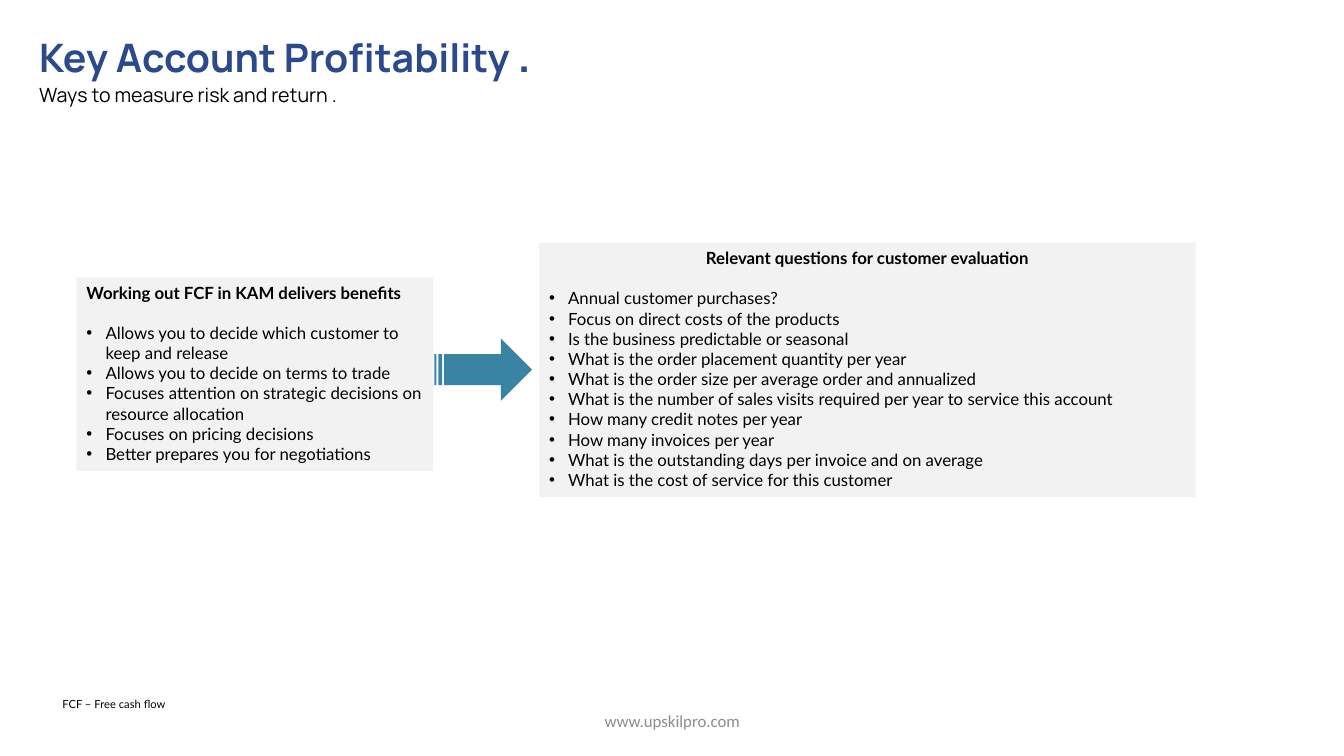
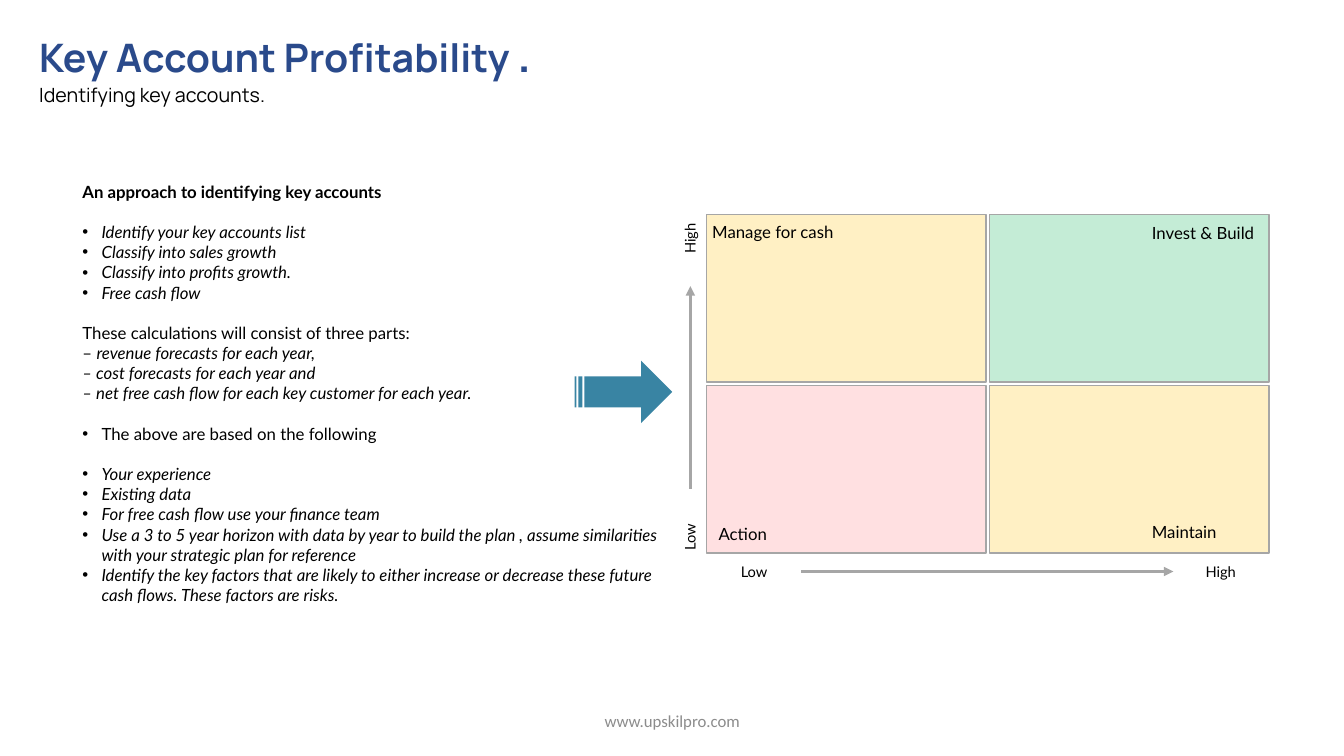
from dataclasses import dataclass

from lxml.etree import SubElement
from pptx import Presentation
from pptx.dml.color import RGBColor
from pptx.enum.shapes import MSO_CONNECTOR as Link, MSO_SHAPE as Preset
from pptx.enum.text import MSO_ANCHOR as Anchor, PP_ALIGN as Align
from pptx.oxml.ns import qn
from pptx.util import Cm, Pt


@dataclass(frozen=True)
class Theme:
    # Colours
    title: str = "2A4A8B"
    text: str = "000000"
    footer: str = "8C8C8C"
    panel: str = "F2F2F2"
    white: str = "FFFFFF"
    arrow: str = "3984A3"
    axis: str = "A6A6A6"
    amber: str = "FFC000"
    green: str = "00B050"
    red: str = "FF7C80"
    # Fonts
    title_font: str = "Manrope"
    body_font: str = "Lato"
    footer_font: str = "Calibri"
    # Type sizes and spacing in points
    title_size: float = 28
    title_dot_size: float = 32
    subtitle_size: float = 14
    body_size: float = 12
    axis_size: float = 10.5
    note_size: float = 8
    line_gap: float = 14.4


THEME = Theme()


def write(frame, text, size=THEME.body_size, font=THEME.body_font,
          color=THEME.text, bold=False, italic=False, align=Align.LEFT,
          before=0, after=0, spacing=None, bullet=False, tail=None):
    """Add a paragraph; tail is an optional (text, changed format) second run."""
    first = frame.paragraphs[0]
    paragraph = frame.add_paragraph() if first.runs else first
    paragraph.alignment = align
    paragraph.space_before, paragraph.space_after = Pt(before), Pt(after)
    if spacing:
        paragraph.line_spacing = spacing
    if bullet:
        properties = paragraph._p.get_or_add_pPr()
        properties.set("marL", str(Cm(0.48)))
        properties.set("indent", str(-Cm(0.48)))
        SubElement(properties, qn("a:buFont")).set("typeface", "Arial")
        SubElement(properties, qn("a:buChar")).set("char", "•")

    base = dict(size=size, italic=italic)
    tail_text, changes = tail or ("", {})
    for words, style in ((text, base), (tail_text, {**base, **changes})):
        if words:
            run = paragraph.add_run()
            run.text = words
            run.font.name, run.font.bold = font, bold
            run.font.size, run.font.italic = Pt(style["size"]), style["italic"]
            run.font.color.rgb = RGBColor.from_string(color)


class Deck:
    """Holds the style and the current slide; lengths are centimetres."""

    def __init__(self, theme):
        self.theme = theme
        self.file = Presentation()
        self.file.slide_width, self.file.slide_height = Cm(33.87), Cm(19.05)
        self.slide = None

    def start_slide(self, subtitle):
        theme = self.theme
        self.slide = self.file.slides.add_slide(self.file.slide_layouts[6])
        self.label(11.23, 17.65, 11.43, 1.02, "www.upskilpro.com",
                   anchor=Anchor.MIDDLE, font=theme.footer_font,
                   color=theme.footer, align=Align.CENTER)
        heading = self.label(0.74, 0.58, 17.81, 2.24, "Key Account Profitability ",
                             size=theme.title_size, font=theme.title_font,
                             color=theme.title, bold=True,
                             tail=(".", {"size": theme.title_dot_size}))
        write(heading, subtitle, size=theme.subtitle_size,
              font=theme.title_font, spacing=1.07, after=8)

    def label(self, left, top, width, height, text, rotation=0,
              anchor=Anchor.TOP, **style):
        box = self.slide.shapes.add_textbox(Cm(left), Cm(top), Cm(width), Cm(height))
        box.rotation = rotation
        frame = box.text_frame
        frame.word_wrap, frame.vertical_anchor = True, anchor
        write(frame, text, **style)
        return frame

    def block(self, preset, left, top, width, height, fill, alpha=None, line=None):
        block = self.slide.shapes.add_shape(
            preset, Cm(left), Cm(top), Cm(width), Cm(height))
        block.shadow.inherit = False
        block.fill.solid()
        block.fill.fore_color.rgb = RGBColor.from_string(fill)
        if alpha is not None:
            color = next(block.fill._xPr.iter(qn("a:srgbClr")))
            SubElement(color, qn("a:alpha")).set("val", str(alpha * 1000))
        if line:
            block.line.color.rgb = RGBColor.from_string(line)
            block.line.width = Pt(1)
        else:
            block.line.fill.background()
        return block

    def panel(self, left, top, width, height, fill, heading, lines, align=Align.LEFT):
        """Draw a heading and lines given as (text, format) pairs."""
        panel = self.block(Preset.RECTANGLE, left, top, width, height, fill)
        frame = panel.text_frame
        frame.word_wrap, frame.vertical_anchor = True, Anchor.TOP
        write(frame, heading, bold=True, align=align)
        for text, style in lines:
            write(frame, text, **style)

    def striped_arrow(self, left, top):
        self.block(Preset.STRIPED_RIGHT_ARROW, left, top, 2.46, 1.57, self.theme.arrow)

    def axis(self, x1, y1, x2, y2):
        axis = self.slide.shapes.add_connector(
            Link.STRAIGHT, Cm(x1), Cm(y1), Cm(x2), Cm(y2))
        axis.line.color.rgb = RGBColor.from_string(self.theme.axis)
        axis.line.width = Pt(2.25)
        SubElement(axis.line._get_or_add_ln(), qn("a:tailEnd")).set("type", "triangle")
        SubElement(axis._element.spPr, qn("a:effectLst"))


def group(*texts, **style):
    """Pair texts with a format, leaving a line's gap above the first."""
    return [(text, {**style, "before": 0 if index else THEME.line_gap})
            for index, text in enumerate(texts)]


def risk_and_return(deck):
    theme = deck.theme
    deck.start_slide("Ways to measure risk and return .")

    # Benefits lead to evaluation questions
    deck.panel(1.93, 6.99, 8.99, 4.88, theme.panel,
               "Working out FCF in KAM delivers benefits",
               group("Allows you to decide which customer to keep and release",
                     "Allows you to decide on terms to trade",
                     "Focuses attention on strategic decisions on resource allocation",
                     "Focuses on pricing decisions",
                     "Better prepares you for negotiations", bullet=True))
    deck.panel(13.59, 6.12, 16.54, 6.4, theme.panel,
               "Relevant questions for customer evaluation",
               group("Annual customer purchases?",
                     "Focus on direct costs of the products",
                     "Is the business predictable or seasonal",
                     "What is the order placement quantity per year",
                     "What is the order size per average order and annualized",
                     "What is the number of sales visits required per year"
                     " to service this account",
                     "How many credit notes per year",
                     "How many invoices per year",
                     "What is the outstanding days per invoice and on average",
                     "What is the cost of service for this customer", bullet=True),
               align=Align.CENTER)
    deck.striped_arrow(10.95, 8.53)
    deck.label(1.32, 17.45, 10.77, 0.61, "FCF – Free cash flow", size=theme.note_size)


def identifying_accounts(deck):
    theme = deck.theme
    deck.start_slide("Identifying key accounts.")

    # Approach
    steps = group("Identify your key accounts list", "Classify into sales growth",
                  "Classify into profits growth.", "Free cash flow",
                  bullet=True, italic=True)
    calculations = group("These calculations will consist of three parts:") + [
        ("– ", dict(tail=("revenue forecasts for each year,", {"italic": True}))),
        ("– cost forecasts for each year and", dict(italic=True)),
        ("– net free cash flow for each key customer for each year.", dict(italic=True)),
    ]
    basis = group("The above are based on the following", bullet=True)
    sources = group("Your experience", "Existing data",
                    "For free cash flow use your finance team",
                    "Use a 3 to 5 year horizon with data by year to build the plan ,"
                    " assume similarities with your strategic plan for reference",
                    "Identify the key factors that are likely to either increase or"
                    " decrease these future cash flows. These factors are risks.",
                    bullet=True, italic=True)
    deck.panel(1.83, 4.45, 15.14, 11.02, theme.white,
               "An approach to identifying key accounts",
               steps + calculations + basis + sources)
    deck.striped_arrow(14.48, 9.09)

    # Quadrants
    left, top, width, height, gap = 17.81, 5.41, 7.04, 4.22, 0.09
    quadrants = ((theme.amber, theme.green), (theme.red, theme.amber))
    for row, colors in enumerate(quadrants):
        for column, color in enumerate(colors):
            deck.block(Preset.RECTANGLE, left + column * (width + gap),
                       top + row * (height + gap), width, height,
                       color, alpha=23, line=theme.axis)

    # Axes and their scale
    for x, y, text, rotation in ((17.81, 14.05, "Low", 0), (29.57, 14.05, "High", 0),
                                 (16.21, 13.16, "Low", 270), (16.21, 5.64, "High", 270)):
        deck.label(x, y, 2.39, 0.74, text, rotation=rotation,
                   size=theme.axis_size, align=Align.CENTER)
    deck.axis(20.19, 14.4, 29.57, 14.4)
    deck.axis(17.4, 12.32, 17.4, 7.21)

    # Quadrant names
    for x, y, text in ((28.78, 5.49, "Invest & Build"), (28.78, 13.03, "Maintain"),
                       (17.86, 13.08, "Action"), (17.7, 5.46, "Manage for cash")):
        deck.label(x, y, 4.14, 0.76, text)


def main():
    deck = Deck(THEME)
    risk_and_return(deck)
    identifying_accounts(deck)
    deck.file.save("out.pptx")


if __name__ == "__main__":
    main()
